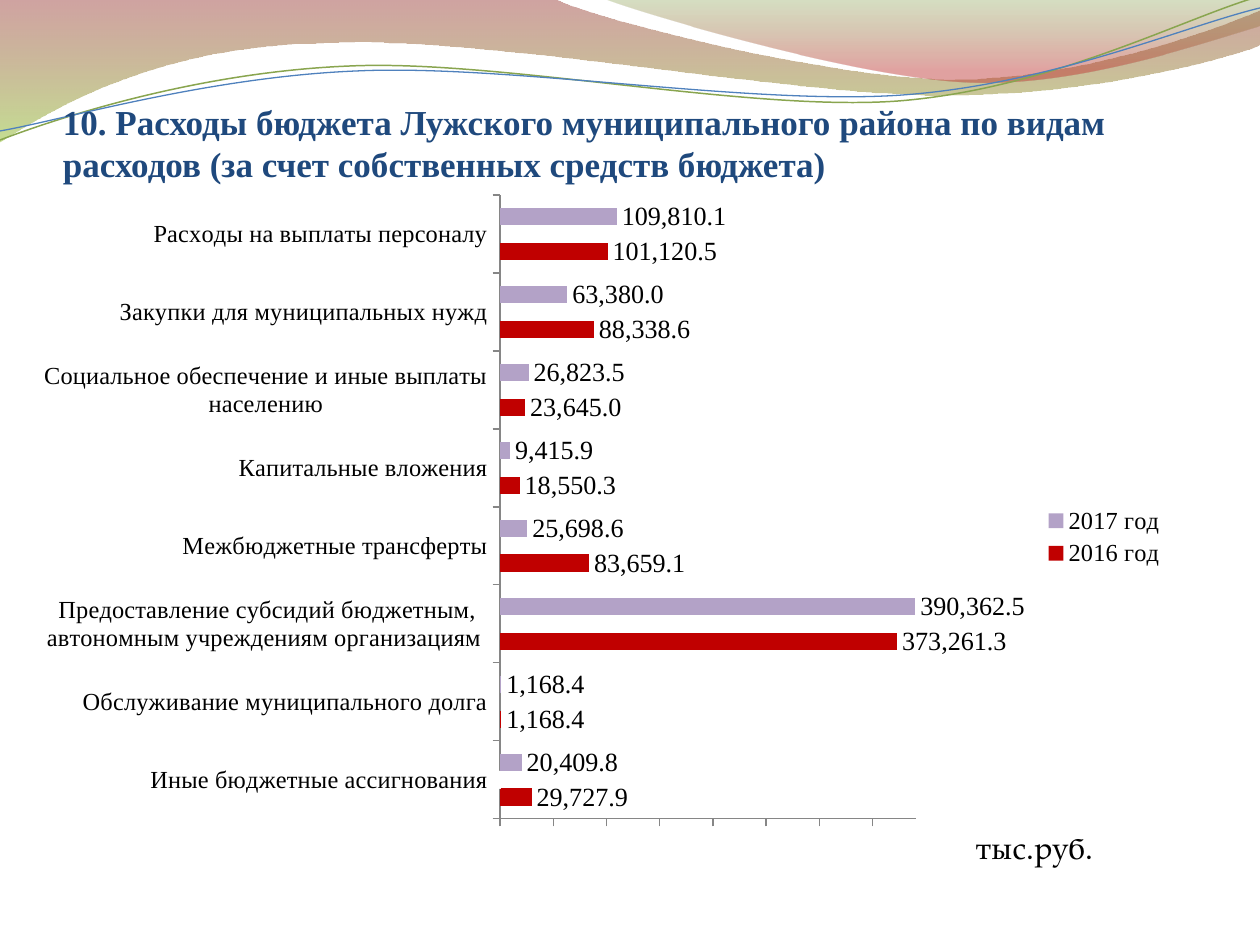
from lxml import etree
from pptx import Presentation
from pptx import util as u
from pptx.chart.data import CategoryChartData
from pptx.dml.color import RGBColor
from pptx.enum import chart as ch, text
from pptx.oxml import ns

PX = 914400 / 126
NUMBER = "#,##0.0"


class Theme:
    heading, ink, axis, white = "1F497D", "000000", "868686", "FFFFFF"
    serif, body = "Times New Roman", "TeX Gyre Pagella"
    title, unit, value, label = 20, 18, 15, 14


TITLE = ("10. Расходы бюджета Лужского муниципального района по видам "
         "расходов (за счет собственных средств бюджета)")
UNIT = "тыс.руб."
SPENDING = [  # category, 2016, 2017
    ("Иные бюджетные ассигнования", 29727.9, 20409.8),
    ("Обслуживание муниципального долга", 1168.4, 1168.4),
    ("Предоставление субсидий бюджетным, автономным учреждениям организациям ",
     373261.3, 390362.5),
    ("Межбюджетные трансферты", 83659.1, 25698.6),
    ("Капитальные вложения", 18550.3, 9415.9),
    ("Социальное обеспечение и иные выплаты населению", 23645, 26823.5),
    ("Закупки для муниципальных нужд", 88338.6, 63380),
    ("Расходы на выплаты персоналу", 101120.5, 109810.1),
]
CATEGORIES, Y2016, Y2017 = zip(*SPENDING)
SPACER = 1  # index of the empty series that separates the bars
SERIES = [("2016 год", Y2016, "C00000"),
          ("Series 2", (0,), "C0504D"),
          ("2017 год", Y2017, "B3A2C7")]
CHART_BOX = (44, 185, 1134, 704)

# Outlines in px: a pair is a straight step, six numbers are a Bezier curve.
# Gradient stops: position, colour, opacity in percent.
BANDS = [
    ([(0, 0), (554, -1), (600, 21, 837, 79, 955, 79),
      (1075, 79, 1207, 33, 1260, 11), (1261, 45),
      (1239, 55, 1096, 96, 940, 95), (784, 95, 481, 35, 324, 43),
      (163, 45, 58, 105, -1, 142), (0, 0)],
     [(0, "973330", 45), (1, "95C238", 55)]),
    ([(604, -1), (641, 14, 859, 78, 969, 82),
      (1079, 87, 1211, 40, 1260, 26), (1260, 0), (604, -1)],
     [(0, "769537", 30), (0.8, "BE3330", 45)]),
]
WAVES = [
    ([(0, 140), (60, 117, 199, 72, 349, 66), (498, 59, 747, 112, 898, 101),
      (1050, 89, 1182, 19, 1257, -3)], "89A54F", 0.85),
    ([(0, 131), (59, 121, 207, 77, 357, 71), (508, 64, 752, 106, 903, 95),
      (1053, 84, 1185, 26, 1260, 8)], "4F81BD", 0.75),
]


def px(*lengths):
    return [u.Emu(round(n * PX)) for n in lengths]


def rgb(code):
    return RGBColor.from_string(code)


def set_font(font, size, name, color=Theme.ink, bold=False):
    font.size, font.name, font.bold = u.Pt(size), name, bold
    font.color.rgb = rgb(color)


def add_outline(s, outline, close):
    """Draw all points as a polygon, then join control points into curves."""
    start, *steps = outline
    builder = s.shapes.build_freeform(*px(*start))
    for step in steps:
        pairs = list(zip(*[iter(px(*step))] * 2))
        builder.add_line_segments(pairs, close=close and step is steps[-1])
    sp = builder.convert_to_shape()
    sp.shadow.inherit = False
    lines = iter(list(sp._element.iter(ns.qn("a:lnTo"))))
    for step in steps:
        node = next(lines)
        if len(step) == 6:
            node.tag = ns.qn("a:cubicBezTo")
            for extra in (next(lines), next(lines)):
                node.append(extra[0])
                extra.getparent().remove(extra)
    return sp


def add_band(s, outline, stops):
    sp = add_outline(s, outline, True)
    sp.line.fill.background()
    sp.fill.gradient()
    sp.fill.gradient_angle = 270
    for stop, (position, color, _) in zip(sp.fill.gradient_stops, stops):
        stop.position = position
        stop.color.rgb = rgb(color)
    for node, (_, _, opacity) in zip(sp._element.iter(ns.qn("a:srgbClr")), stops):
        etree.SubElement(node, ns.qn("a:alpha"), val=str(opacity * 1000))


def add_wave(s, outline, color, width):
    sp = add_outline(s, outline, False)
    sp.fill.background()
    sp.line.color.rgb = rgb(color)
    sp.line.width = u.Pt(width)


def add_title(s):
    tf = s.shapes.add_textbox(*px(63, 97, 1134, 88)).text_frame
    tf.word_wrap = True
    tf.vertical_anchor = text.MSO_ANCHOR.BOTTOM
    tf.margin_left = tf.margin_right = tf.margin_bottom = 0
    tf.margin_top = u.Inches(0.05)
    p = tf.paragraphs[0]
    p.text = TITLE
    set_font(p.font, Theme.title, Theme.serif, Theme.heading, True)


def set_layout(parent, index, modes, **lengths):
    """Place a chart part by px measured inside the chart area."""
    for old in parent.findall(ns.qn("c:layout")):
        parent.remove(old)
    layout = etree.Element(ns.qn("c:layout"))
    manual = etree.SubElement(layout, ns.qn("c:manualLayout"))
    width, height = CHART_BOX[2:]
    parts = {k: n / (width if k in "xw" else height) for k, n in lengths.items()}
    for tag, value in {**modes, "xMode": "edge", "yMode": "edge", **parts}.items():
        etree.SubElement(manual, ns.qn("c:" + tag), val=str(value))
    parent.insert(index, layout)


def add_spending_chart(s):
    data = CategoryChartData(number_format=NUMBER)
    data.categories = CATEGORIES
    for name, values, _ in SERIES:
        data.add_series(name, values)
    chart = s.shapes.add_chart(ch.XL_CHART_TYPE.BAR_CLUSTERED,
                               *px(*CHART_BOX), data).chart
    set_font(chart.font, Theme.unit, Theme.body)
    chart.has_title = False

    plot = chart.plots[0]
    plot.gap_width, plot.overlap, plot.vary_by_categories = 150, 0, False
    for i, (series, (_, _, color)) in enumerate(zip(plot.series, SERIES)):
        series.format.fill.solid()
        series.format.fill.fore_color.rgb = rgb(color)
        if i == SPACER:
            series.format.line.color.rgb = rgb(Theme.white)
            series.format.line.width = u.Pt(0.75)
            continue
        labels = series.data_labels
        labels.show_value = True
        labels.number_format, labels.number_format_is_linked = NUMBER, False
        labels.position = ch.XL_LABEL_POSITION.OUTSIDE_END
        set_font(labels.font, Theme.value, Theme.serif)

    cat, val = chart.category_axis, chart.value_axis
    for axis in (cat, val):
        axis.has_major_gridlines = False
        axis.major_tick_mark = ch.XL_TICK_MARK.OUTSIDE
        axis.format.line.color.rgb = rgb(Theme.axis)
        axis.tick_labels.number_format = NUMBER
        axis.tick_labels.number_format_is_linked = False
    set_font(cat.tick_labels.font, Theme.label, Theme.serif)
    val.minimum_scale, val.maximum_scale, val.major_unit = 0, 390400, 50000
    val.tick_label_position = ch.XL_TICK_LABEL_POSITION.NONE
    p = val.axis_title.text_frame.paragraphs[0]
    p.text = UNIT
    set_font(p.font, Theme.unit, Theme.body)
    set_layout(val.axis_title._element, 1, {}, x=925, y=643)
    set_layout(chart._chartSpace.chart.plotArea, 0, {"layoutTarget": "inner"},
               x=452, y=10, w=418, h=624)

    chart.has_legend = True
    legend = chart.legend
    legend.position = ch.XL_LEGEND_POSITION.RIGHT
    legend.include_in_layout = False
    set_font(legend.font, Theme.label, Theme.serif)
    entry = etree.Element(ns.qn("c:legendEntry"))
    etree.SubElement(entry, ns.qn("c:idx"), val=str(SPACER))
    etree.SubElement(entry, ns.qn("c:delete"), val="1")
    legend._element.insert(1, entry)


def main():
    prs = Presentation()
    prs.slide_width, prs.slide_height = px(1260, 945)
    s = prs.slides.add_slide(prs.slide_layouts[6])
    for band in BANDS:
        add_band(s, *band)
    for wave in WAVES:
        add_wave(s, *wave)
    add_title(s)
    add_spending_chart(s)
    prs.save("out.pptx")


if __name__ == "__main__":
    main()
